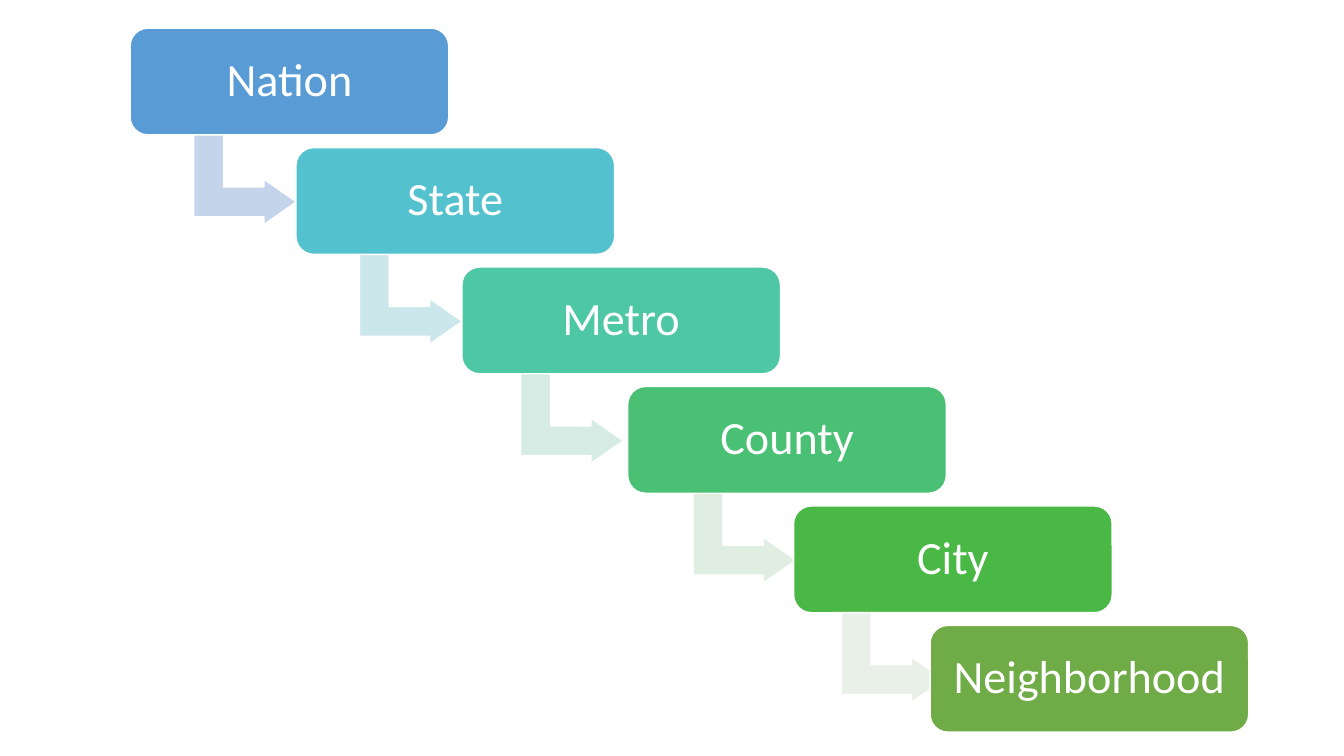
from pptx import Presentation
from pptx.dml.color import RGBColor
from pptx.enum.shapes import MSO_SHAPE
from pptx.enum.text import MSO_ANCHOR, PP_ALIGN
from pptx.util import Cm, Pt

BOX = MSO_SHAPE.ROUNDED_RECTANGLE
ARROW = MSO_SHAPE.BENT_UP_ARROW
CENTER = PP_ALIGN.CENTER
MIDDLE = MSO_ANCHOR.MIDDLE

COLORS = {
    "white": "FFFFFF",
    "Nation": "599BD5",
    "State": "53C1CE",
    "Metro": "4EC7A5",
    "County": "49C073",
    "City": "49B845",
    "Neighborhood": "6FAB46",
    "Nation arrow": "C3D4EB",
    "State arrow": "CCE7EB",
    "Metro arrow": "D6EBE3",
    "County arrow": "DFEEE1",
    "City arrow": "E9F0E7",
}

# Level name, shift of its box from the even stair, inset of its arrow
LEVELS = [
    ("Nation", 0, 1.75),
    ("State", 0, 1.75),
    ("Metro", 0, 1.63),
    ("County", 0, 1.8),
    ("City", 0, 1.35),
    ("Neighborhood", -0.74, None),
]
BOX_W, BOX_H = 8.03, 2.69
STEP_X, STEP_Y = 4.18, 3.01
ARROW_W, ARROW_H = 2.29, 2.59
ARROW_DROP = 2.51


def color(name):
    return RGBColor.from_string(COLORS[name])


def add_shape(slide, kind, place, fill, adjust):
    """Add a flat shape with a thin white outline; place is in cm."""
    shape = slide.shapes.add_shape(kind, *map(Cm, place))
    shape.shadow.inherit = False
    shape.fill.solid()
    shape.fill.fore_color.rgb = color(fill)
    shape.line.color.rgb = color("white")
    shape.line.width = Pt(1)
    for i, value in enumerate(adjust):
        shape.adjustments[i] = value
    return shape


def add_text(shape, text, size=33, font="Calibri", ink="white", inset=0.36):
    frame = shape.text_frame
    frame.word_wrap = True
    frame.vertical_anchor = MIDDLE
    frame.margin_left = frame.margin_right = Cm(inset)
    frame.margin_top = frame.margin_bottom = Cm(inset)
    para = frame.paragraphs[0]
    para.alignment = CENTER
    para.line_spacing = 0.9
    run = para.add_run()
    run.text = text
    run.font.size = Pt(size)
    run.font.name = font
    run.font.color.rgb = color(ink)


def add_level(slide, left, top, name, inset):
    """Add one stair: its box and, unless it is the last, its arrow."""
    if inset is not None:
        place = (left + inset, top + ARROW_DROP, ARROW_W, ARROW_H)
        arrow = add_shape(slide, ARROW, place, f"{name} arrow",
                          (0.328, 0.25, 0.358))
        arrow.rotation = 90
    box = add_shape(slide, BOX, (left, top, BOX_W, BOX_H), name, (0.167,))
    add_text(box, name)


def add_stairs(slide, left, top):
    for i, (name, shift, inset) in enumerate(LEVELS):
        add_level(slide, left + i * STEP_X + shift, top + i * STEP_Y,
                  name, inset)


def main():
    deck = Presentation()
    deck.slide_width, deck.slide_height = Cm(33.87), Cm(19.05)
    slide = deck.slides.add_slide(deck.slide_layouts[6])
    add_stairs(slide, 3.28, 0.71)
    deck.save("out.pptx")


if __name__ == "__main__":
    main()
